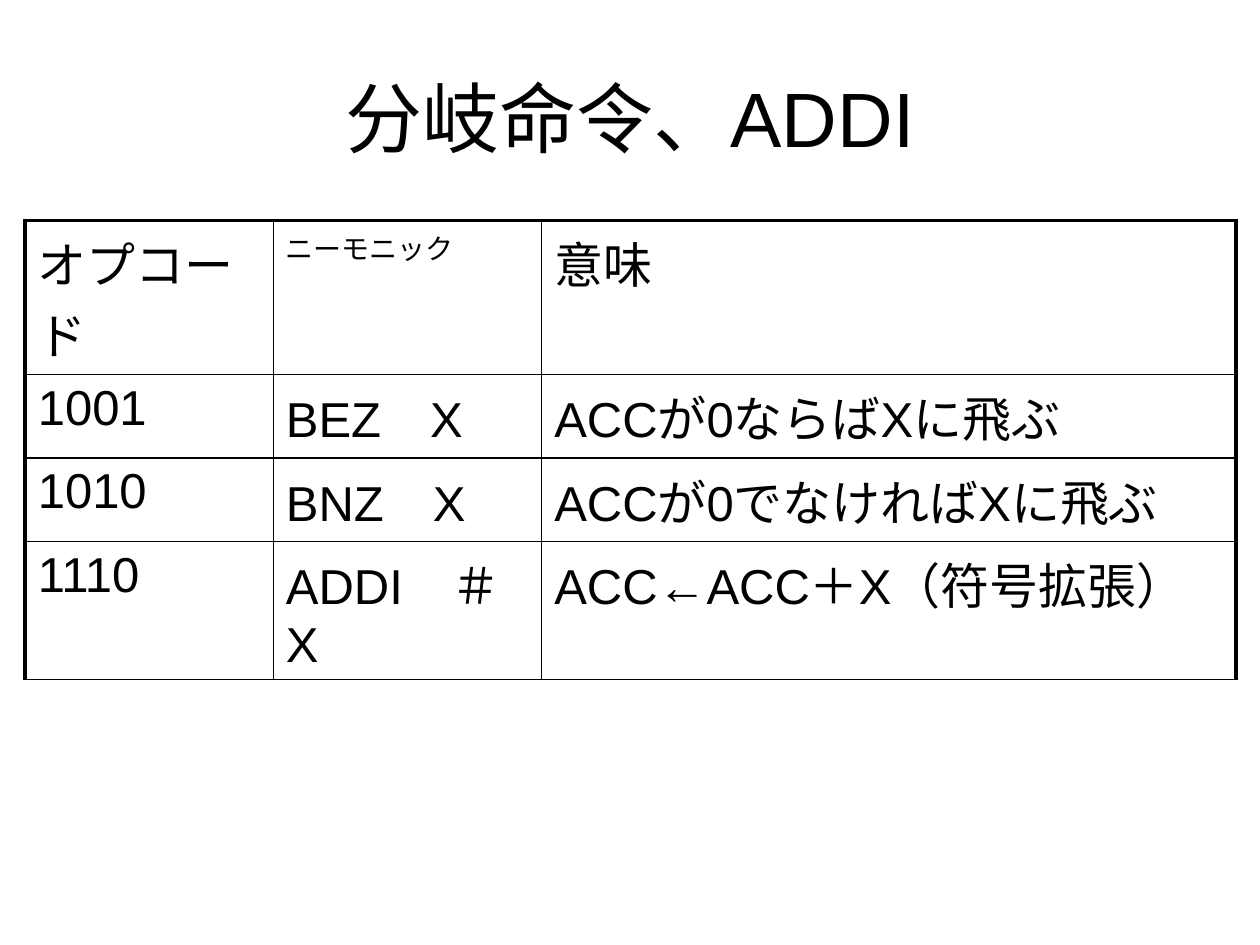
from dataclasses import dataclass

from lxml.etree import SubElement
from pptx import Presentation
from pptx.dml.color import RGBColor
from pptx.enum.text import MSO_ANCHOR, PP_ALIGN
from pptx.oxml.ns import qn
from pptx.util import Inches, Pt

SLIDE_WIDTH, SLIDE_HEIGHT = Inches(10), Inches(7.5)
COLORS = {"ink": "000000"}
FONT = "Arial"
OUTER, INNER = 2.25, 1
COLUMN_SHARES = (0.197, 0.213, 0.551)
ROW_SHARE = 0.065


@dataclass(frozen=True)
class Instruction:
    opcode: str
    mnemonic: str
    meaning: str

    def fields(self) -> tuple[str, str, str]:
        return self.opcode, self.mnemonic, self.meaning


HEADING = Instruction("オプコード", "ニーモニック", "意味")
INSTRUCTIONS = (
    Instruction("1001", "BEZ　X", "ACCが0ならばXに飛ぶ"),
    Instruction("1010", "BNZ　X", "ACCが0でなければXに飛ぶ"),
    Instruction("1110", "ADDI　＃X", "ACC←ACC＋X（符号拡張）"),
)


def across(share: float) -> int:
    return round(SLIDE_WIDTH * share)


def down(share: float) -> int:
    return round(SLIDE_HEIGHT * share)


def add_text(paragraph, text: str, size: float) -> None:
    run = paragraph.add_run()
    run.text = text
    run.font.name = FONT
    run.font.size = Pt(size)
    run.font.bold = False
    run.font.color.rgb = RGBColor.from_string(COLORS["ink"])


def set_space_before(paragraph, percent: int) -> None:
    spacing = SubElement(paragraph._p.get_or_add_pPr(), qn("a:spcBef"))
    SubElement(spacing, qn("a:spcPct"), val=str(percent * 1000))


def set_borders(cell, widths: dict[str, float]) -> None:
    properties = cell._tc.get_or_add_tcPr()
    for side, width in widths.items():
        line = SubElement(properties, qn(f"a:ln{side}"), w=str(Pt(width)))
        fill = SubElement(line, qn("a:solidFill"))
        SubElement(fill, qn("a:srgbClr"), val=COLORS["ink"])


def add_title(slide, text: str) -> None:
    title = slide.shapes.title
    title.left, title.top = across(0.05), down(0.04)
    title.width, title.height = across(0.9), down(1 / 6)
    title.text_frame.vertical_anchor = MSO_ANCHOR.MIDDLE
    paragraph = title.text_frame.paragraphs[0]
    paragraph.alignment = PP_ALIGN.CENTER
    add_text(paragraph, text, 44)


def add_instruction_table(slide, entries: tuple[Instruction, ...]) -> None:
    table = slide.shapes.add_table(
        len(entries), len(COLUMN_SHARES),
        across(0.02), down(7 / 30),
        across(sum(COLUMN_SHARES)), down(ROW_SHARE * len(entries)),
    ).table
    table.first_row = table.horz_banding = False
    for column, share in zip(table.columns, COLUMN_SHARES):
        column.width = across(share)
    last_column = len(COLUMN_SHARES) - 1
    for row, entry in enumerate(entries):
        for column, text in enumerate(entry.fields()):
            cell = table.cell(row, column)
            set_borders(cell, {
                "L": OUTER if column == 0 else INNER,
                "R": OUTER if column == last_column else INNER,
                "T": OUTER if row == 0 else INNER,
                "B": INNER,
            })
            cell.fill.background()
            paragraph = cell.text_frame.paragraphs[0]
            set_space_before(paragraph, 20)
            add_text(paragraph, text, 16 if text == HEADING.mnemonic else 28)


def main() -> None:
    presentation = Presentation()
    presentation.slide_width, presentation.slide_height = SLIDE_WIDTH, SLIDE_HEIGHT
    slide = presentation.slides.add_slide(presentation.slide_layouts[5])
    add_title(slide, "分岐命令、ADDI")
    add_instruction_table(slide, (HEADING, *INSTRUCTIONS))
    presentation.save("out.pptx")


if __name__ == "__main__":
    main()
